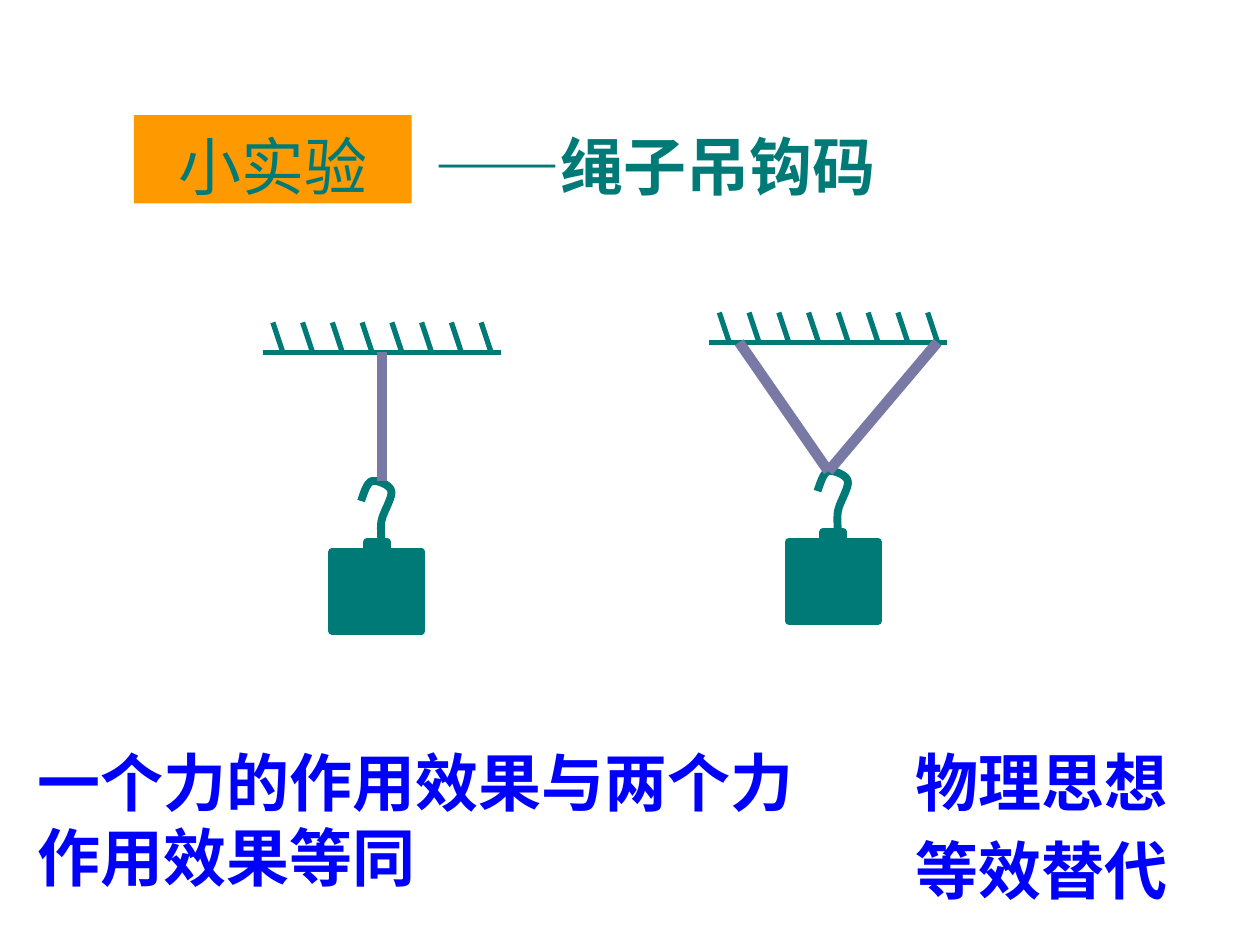
from lxml.etree import SubElement
from pptx import Presentation
from pptx.dml.color import RGBColor
from pptx.enum.shapes import MSO_CONNECTOR, MSO_SHAPE
from pptx.enum.text import MSO_ANCHOR, PP_ALIGN
from pptx.oxml.ns import qn
from pptx.util import Cm, Pt

TEAL = "007A77"
ORANGE = "FF9900"
ROPE = "7979A5"
BLUE = "0000FF"
CHINESE_FONT = "Noto Sans CJK SC"

HOOK_START = (0.58, -1.02)
HOOK_CURVES = [
    ((0.64, -1.19), (0.69, -1.37), (0.79, -1.42)),
    ((0.89, -1.45), (1.17, -1.35), (1.19, -1.22)),
    ((1.22, -1.09), (1.02, -0.79), (0.99, -0.61)),
    ((0.97, -0.46), (0.99, -0.28), (0.99, -0.2)),
]
CURVE_STEPS = 10


def color(value):
    return RGBColor.from_string(value)


def write(shape, lines, font_name, text_color, bold=True, align=PP_ALIGN.LEFT):
    frame = shape.text_frame
    frame.word_wrap = True
    frame.vertical_anchor = MSO_ANCHOR.TOP
    frame.margin_top = Pt(7.2)
    for index, line in enumerate(lines):
        paragraph = frame.paragraphs[0] if index == 0 else frame.add_paragraph()
        paragraph.text = line
        paragraph.alignment = align
        paragraph.line_spacing = Pt(43.2)
        if index:
            paragraph.space_before = Pt(7.2)
        font = paragraph.font
        font.size = Pt(36)
        font.bold = bold
        font.color.rgb = color(text_color)
        font.name = font_name
        properties = paragraph._p.pPr.find(qn("a:defRPr"))
        SubElement(properties, qn("a:ea")).set("typeface", CHINESE_FONT)


def add_text(slide, left, top, width, height, *args, **options):
    box = slide.shapes.add_textbox(Cm(left), Cm(top), Cm(width), Cm(height))
    write(box, *args, **options)


def add_block(slide, left, top, width, height, fill, line_width=0):
    block = slide.shapes.add_shape(
        MSO_SHAPE.RECTANGLE, Cm(left), Cm(top), Cm(width), Cm(height)
    )
    block.shadow.inherit = False
    block.fill.solid()
    block.fill.fore_color.rgb = color(fill)
    if line_width:
        block.line.color.rgb = color(fill)
        block.line.width = Pt(line_width)
    else:
        block.line.fill.background()
    return block


def add_line(slide, start, end, line_color, width):
    line = slide.shapes.add_connector(
        MSO_CONNECTOR.STRAIGHT, *[Cm(value) for value in (*start, *end)]
    )
    line.line.color.rgb = color(line_color)
    line.line.width = Pt(width)
    SubElement(line._element.spPr, qn("a:effectLst"))


def curve_points(start, curves):
    points = []
    for first, second, end in curves:
        for step in range(1, CURVE_STEPS + 1):
            t = step / CURVE_STEPS
            weights = ((1 - t) ** 3, 3 * t * (1 - t) ** 2, 3 * t**2 * (1 - t), t**3)
            corners = (start, first, second, end)
            points.append(
                tuple(
                    sum(weight * corner[axis] for weight, corner in zip(weights, corners))
                    for axis in (0, 1)
                )
            )
        start = end
    return points


def add_weight(slide, left, top):
    add_block(slide, left, top, 1.8, 1.6, TEAL, 4.5)
    add_block(slide, left + 0.7, top - 0.2, 0.4, 0.2, TEAL, 4.5)

    def place(point):
        return Cm(left + point[0]), Cm(top + point[1])

    builder = slide.shapes.build_freeform(*place(HOOK_START))
    points = [place(point) for point in curve_points(HOOK_START, HOOK_CURVES)]
    builder.add_line_segments(points, close=False)
    hook = builder.convert_to_shape()
    hook.shadow.inherit = False
    hook.fill.background()
    hook.line.color.rgb = color(TEAL)
    hook.line.width = Pt(4.5)


def add_ceiling(slide, left, top):
    add_line(slide, (left, top + 0.6), (left + 4.8, top + 0.6), TEAL, 3)
    for index in range(8):
        x = left + 0.2 + 0.6 * index
        add_line(slide, (x, top), (x + 0.2, top + 0.6), TEAL, 3)


def add_experiment(slide, left, top, weight_offset, rope_offsets):
    add_weight(slide, left + weight_offset, top + 4.62)
    add_ceiling(slide, left, top)
    for offset in rope_offsets:
        add_line(
            slide, (left + offset, top + 0.6), (left + 2.4, top + 3.2), ROPE, 6
        )


def add_heading(slide, left, top):
    label = add_block(slide, left, top, 5.6, 1.78, ORANGE)
    write(label, ["小实验"], "Times New Roman", TEAL, False, PP_ALIGN.CENTER)
    add_text(slide, left + 5.82, top, 11.6, 1.78, ["——绳子吊钩码"], CHINESE_FONT, TEAL)


def add_conclusion(slide, left, top):
    add_text(
        slide, left, top, 16.43, 3.3,
        ["一个力的作用效果与两个力作用效果等同"], "Arial", BLUE,
    )
    add_text(
        slide, left + 16.1, top, 8.8, 3.48,
        ["物理思想", "等效替代"], "Arial", BLUE, align=PP_ALIGN.CENTER,
    )


def main():
    presentation = Presentation()
    presentation.slide_width = Cm(25.4)
    presentation.slide_height = Cm(19.05)
    slide = presentation.slides.add_slide(presentation.slide_layouts[6])
    add_heading(slide, 2.7, 2.32)
    add_experiment(slide, 5.3, 6.5, 1.4, [2.4])
    add_experiment(slide, 14.3, 6.3, 1.6, [0.6, 4.6])
    add_conclusion(slide, 0.5, 14.73)
    presentation.save("out.pptx")


if __name__ == "__main__":
    main()
